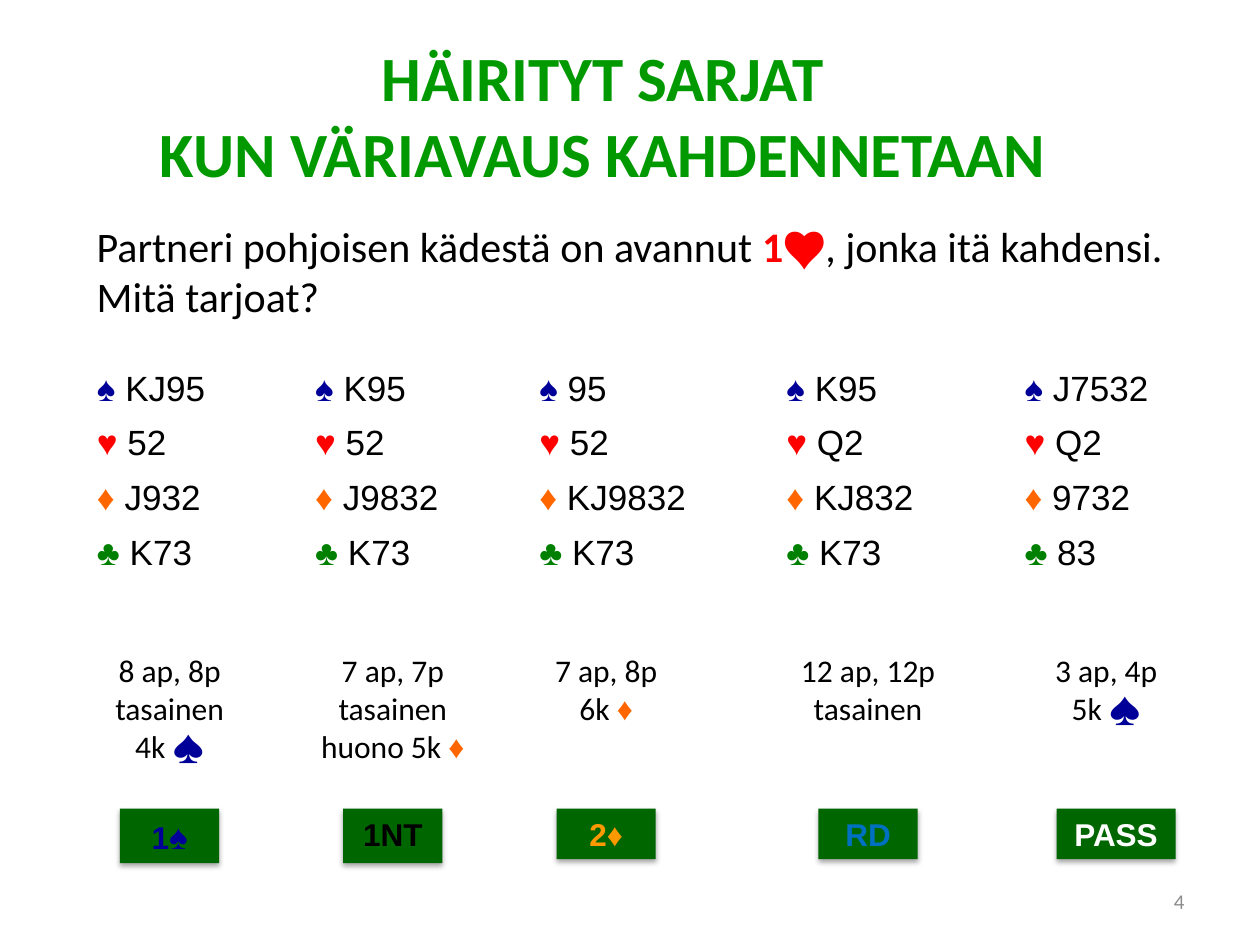
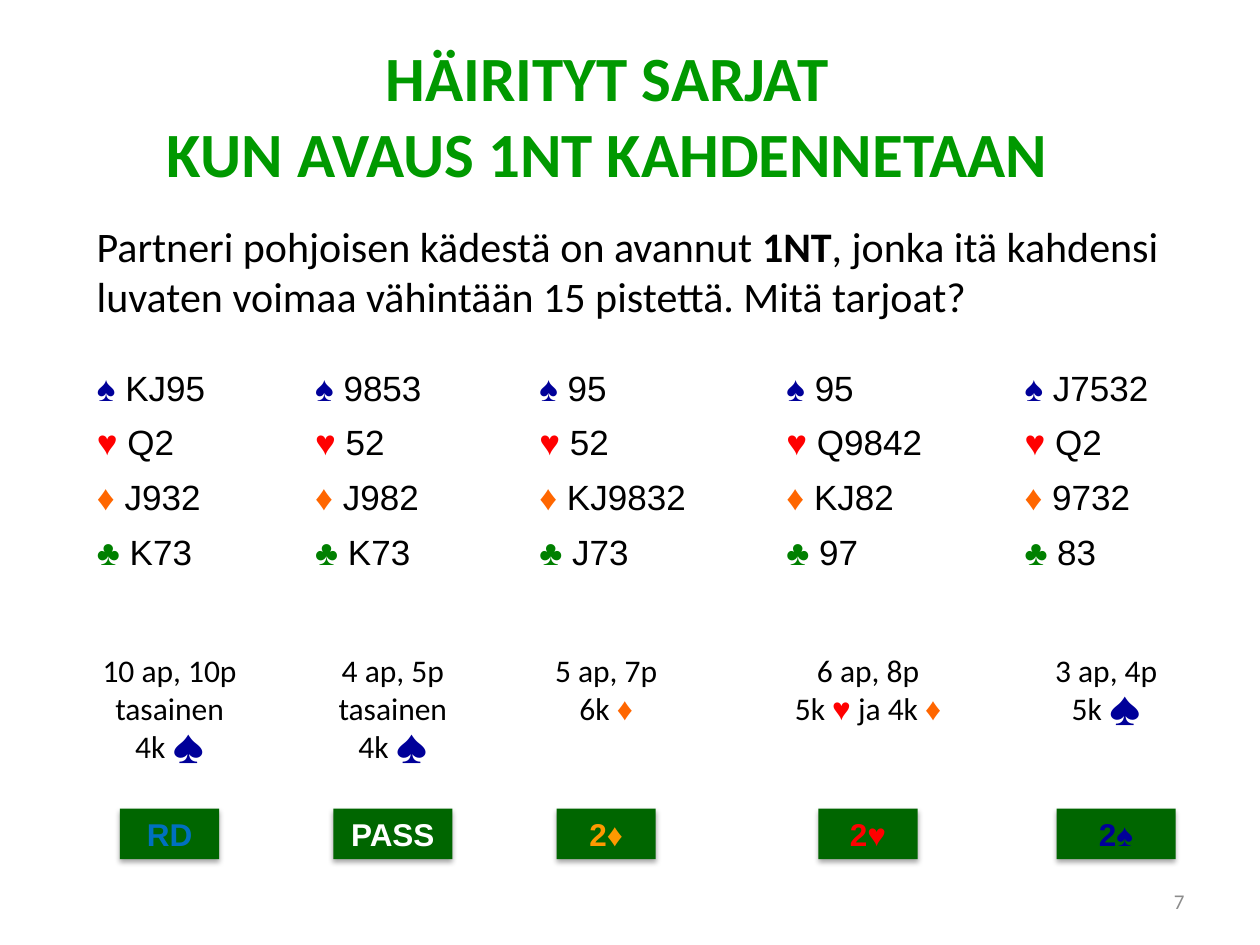
from dataclasses import dataclass
from itertools import groupby

from lxml import etree
from pptx import Presentation
from pptx import util as u
from pptx.dml import color
from pptx.enum import shapes, text
from pptx.oxml import ns

BLACK, WHITE, GREY = "000000", "FFFFFF", "8C8C8C"
TITLE_GREEN, BID_GREEN = "009900", "006600"
NAVY, RED, AMBER, BLUE = "000099", "FF0000", "FF9900", "0070C0"
SUITS = {"♠": NAVY, "♥": RED, "♦": "FF6600", "♣": "008000"}

TITLE = dict(size=36, name="Calibri", bold=True, color=TITLE_GREEN)
INTRO = dict(size=24, name="Calibri", bold=False, color=BLACK)
CARDS = dict(size=20, name="Arial", color=BLACK)
NOTE = dict(size=18, name="Calibri", color=BLACK)
BID = dict(size=18, name="Arial", bold=True)
NUMBER = dict(size=12, name="Calibri", color=GREY)

COLUMN_WIDTHS = (4.4, 4.52, 4.98, 4.8, 4.0)
NOTE_CENTRES = (3.42, 7.92, 12.22, 17.5, 22.3)
BID_CENTRES = (3.42, 7.92, 12.22, 17.5, 22.5)
NOTE_WIDTHS = (3.4, 3.6, 4.18, 5.5, 4.2)
NARROW_BID, WIDE_BID = 2.0, 2.4
LOW_BID, HIGH_BID = 1.02, 1.1


@dataclass
class Hand:
    """A hand, its valuation and the bid it leads to."""
    cards: tuple
    note: tuple
    bid: list
    shift: float = 0
    bid_width: float = NARROW_BID
    bid_height: float = LOW_BID


def rgb(code):
    """Turn a hex string into a colour."""
    return color.RGBColor.from_string(code)


def add_spans(para, spans, base):
    """Add formatted spans of text to a paragraph."""
    for words, changes in spans:
        span = para.add_run()
        span.text = words
        for key, value in {**base, **changes}.items():
            if key == "color":
                span.font.color.rgb = rgb(value)
            else:
                setattr(span.font, key, u.Pt(value) if key == "size" else value)


def suit_spans(words, symbol_fonts):
    """Split text into spans that colour the suit symbols."""
    spans = []
    for suit, letters in groupby(words, lambda letter: letter if letter in SUITS else ""):
        changes = {"color": SUITS[suit]} if suit else {}
        if suit in symbol_fonts:
            changes["name"] = symbol_fonts[suit]
        spans.append(("".join(letters), changes))
    return spans


def add_text_box(page, box, grow=True):
    """Add a wrapping text box and return its frame."""
    frame = page.shapes.add_textbox(*map(u.Cm, box)).text_frame
    frame.word_wrap = True
    if grow:
        frame.auto_size = text.MSO_AUTO_SIZE.SHAPE_TO_FIT_TEXT
    return frame


def add_title(page, box, lines):
    """Add the centred two-line title."""
    para = add_text_box(page, box).paragraphs[0]
    para.alignment = text.PP_ALIGN.CENTER
    add_spans(para, [(lines[0], {})], TITLE)
    para.add_line_break()
    add_spans(para, [(lines[1], {})], TITLE)


def add_intro(page, box, spans):
    """Add the question above the hands."""
    add_spans(add_text_box(page, box).paragraphs[0], spans, INTRO)


def add_hands(page, box, hands):
    """Add the table with one hand in each column."""
    table = page.shapes.add_table(len(SUITS), len(hands), *map(u.Cm, box)).table
    table.first_row = table.horz_banding = False
    for column, width in zip(table.columns, COLUMN_WIDTHS):
        column.width = u.Cm(width)
    for row, suit in enumerate(SUITS):
        table.rows[row].height = u.Cm(box[3] / len(SUITS))
        for col, hand in enumerate(hands):
            cell = table.cell(row, col)
            cell.fill.background()
            para = cell.text_frame.paragraphs[0]
            para.alignment = text.PP_ALIGN.JUSTIFY
            add_spans(para, suit_spans(f"{suit} {hand.cards[row]}", {}), CARDS)


def add_note(page, box, hand):
    """Add the valuation of a hand, its last line shifted to the left."""
    frame = add_text_box(page, box)
    for index, line in enumerate(hand.note):
        para = frame.add_paragraph() if index else frame.paragraphs[0]
        para.alignment = text.PP_ALIGN.CENTER
        add_spans(para, suit_spans(line, {"♥": "Arial", "♦": "Arial"}), NOTE)
    if hand.shift:
        props = para._p.get_or_add_pPr()
        props.set("marL", "0")
        props.set("indent", str(-u.Pt(hand.shift)))


def add_shadow(shape):
    """Give a shape a soft shadow below it."""
    effects = etree.SubElement(shape._element.spPr, ns.qn("a:effectLst"))
    shadow = etree.SubElement(effects, ns.qn("a:outerShdw"), blurRad=str(u.Pt(3.1)),
                              dist=str(u.Pt(1.8)), dir="5400000", rotWithShape="0")
    tone = etree.SubElement(shadow, ns.qn("a:srgbClr"), val=BLACK)
    etree.SubElement(tone, ns.qn("a:alpha"), val="35000")


def add_bid(page, box, spans):
    """Add the green card with the bid."""
    shape = page.shapes.add_shape(shapes.MSO_SHAPE.RECTANGLE, *map(u.Cm, box))
    shape.fill.solid()
    shape.fill.fore_color.rgb = rgb(BID_GREEN)
    shape.line.fill.background()
    add_shadow(shape)
    frame = shape.text_frame
    frame.word_wrap = True
    frame.vertical_anchor = text.MSO_ANCHOR.TOP
    para = frame.paragraphs[0]
    para.alignment = text.PP_ALIGN.CENTER
    add_spans(para, spans, BID)


def add_number(page, box, number):
    """Add the page number at the lower right."""
    frame = add_text_box(page, box, grow=False)
    frame.vertical_anchor = text.MSO_ANCHOR.MIDDLE
    para = frame.paragraphs[0]
    para.alignment = text.PP_ALIGN.RIGHT
    add_spans(para, [(str(number), {})], NUMBER)


def add_quiz(deck, title_left, title, intro, hands, number):
    """Add a page with five hands and their bids."""
    page = deck.slides.add_slide(deck.slide_layouts[6])
    add_title(page, (title_left, 0.66, 21.9 - title_left, 3.33), title)
    add_hands(page, (1.7, 7.32, sum(COLUMN_WIDTHS), 4.4), hands)
    for hand, centre, width in zip(hands, NOTE_CENTRES, NOTE_WIDTHS):
        height = 0.25 + 0.77 * len(hand.note)
        add_note(page, (centre - width / 2, 13.0, width, height), hand)
    add_intro(page, (1.7, 4.32, 22.02, 2.31), intro)
    for hand, centre in zip(hands, BID_CENTRES):
        left = centre - hand.bid_width / 2
        add_bid(page, (left, 16.3, hand.bid_width, hand.bid_height), hand.bid)
    add_number(page, (18.2, 17.66, 5.93, 1.01), number)


def main():
    """Build both pages and save the deck."""
    deck = Presentation()
    deck.slide_width, deck.slide_height = u.Cm(25.4), u.Cm(19.05)

    redouble = [("RD", {"color": BLUE})]
    no_bid = [("PASS", {"color": WHITE})]
    two_diamonds = [("2♦", {"color": AMBER})]
    weak_spades = dict(cards=("J7532", "Q2", "9732", "83"),
                       note=("3 ap, 4p", "5k ♠"), shift=8, bid_width=WIDE_BID)
    opening = "Partneri pohjoisen kädestä on avannut "

    add_quiz(
        deck, 2.41, ("HÄIRITYT SARJAT", "KUN VÄRIAVAUS KAHDENNETAAN"),
        [(opening, {}), ("1", {"color": RED, "bold": True}), ("♥", {"color": RED}),
         (", jonka itä kahdensi. Mitä tarjoat?", {})],
        [Hand(("KJ95", "52", "J932", "K73"), ("8 ap, 8p", "tasainen", "4k ♠"),
              [("1", {"color": NAVY}), ("♠", {"color": NAVY, "size": 20})],
              shift=8, bid_height=HIGH_BID),
         Hand(("K95", "52", "J9832", "K73"), ("7 ap, 7p", "tasainen", "huono 5k ♦"),
              [("1NT", {"color": BLACK})], shift=10, bid_height=HIGH_BID),
         Hand(("95", "52", "KJ9832", "K73"), ("7 ap, 8p", "6k ♦"), two_diamonds),
         Hand(("K95", "Q2", "KJ832", "K73"), ("12 ap, 12p", "tasainen"), redouble),
         Hand(bid=no_bid, **weak_spades)],
        4)

    add_quiz(
        deck, 2.59, ("HÄIRITYT SARJAT", "KUN AVAUS 1NT KAHDENNETAAN"),
        [(opening, {}), ("1NT", {"bold": True}),
         (", jonka itä kahdensi luvaten voimaa vähintään 15 pistettä. Mitä tarjoat?", {})],
        [Hand(("KJ95", "Q2", "J932", "K73"), ("10 ap, 10p", "tasainen", "4k ♠"),
              redouble, shift=8),
         Hand(("9853", "52", "J982", "K73"), ("4 ap, 5p", "tasainen", "4k ♠"),
              no_bid, shift=16, bid_width=WIDE_BID),
         Hand(("95", "52", "KJ9832", "J73"), ("5 ap, 7p", "6k ♦"), two_diamonds),
         Hand(("95", "Q9842", "KJ82", "97"), ("6 ap, 8p", "5k ♥ ja 4k ♦"),
              [("2", {"color": RED}), ("♥", {"color": RED, "bold": False})], shift=10),
         Hand(bid=[("2♠", {"color": NAVY})], **weak_spades)],
        7)

    deck.save("out.pptx")


if __name__ == "__main__":
    main()
